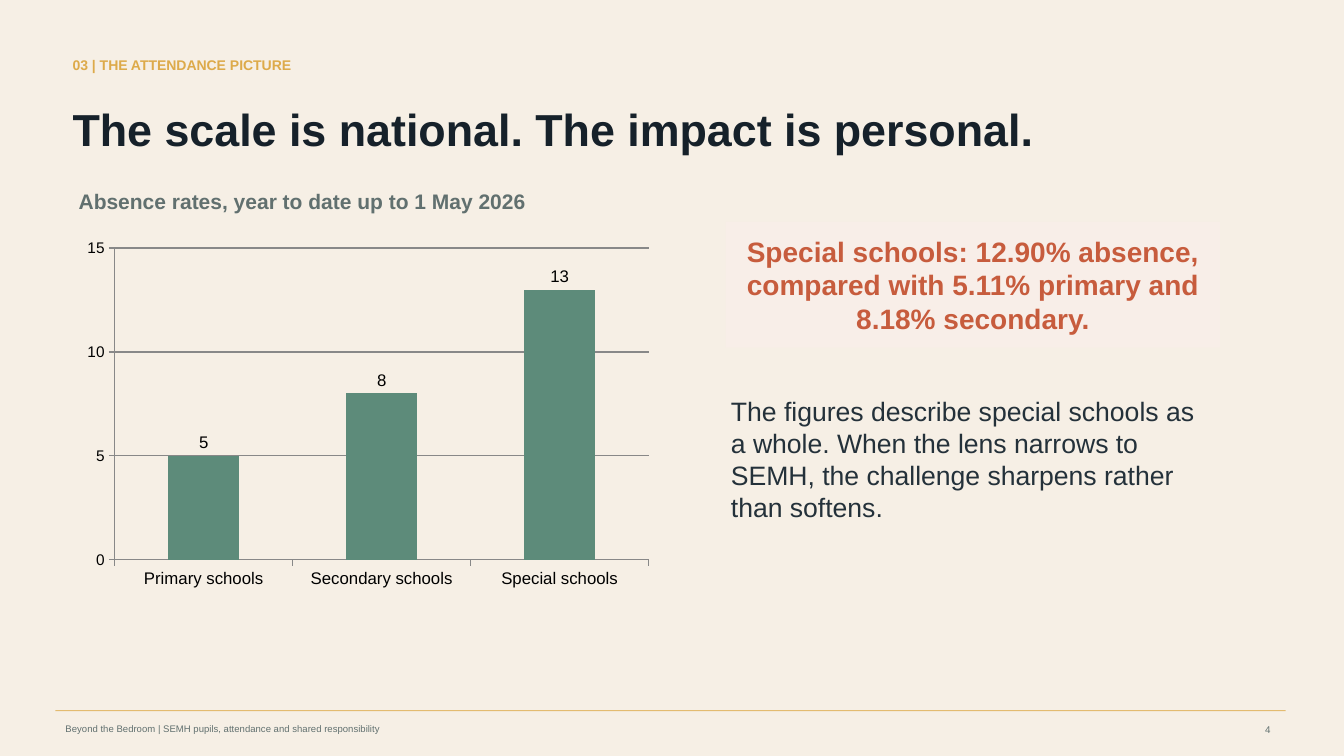
from lxml.etree import SubElement
from pptx import Presentation
from pptx.chart.data import CategoryChartData
from pptx.dml.color import RGBColor
from pptx.enum.chart import XL_CHART_TYPE as CHART, XL_LABEL_POSITION as LABEL
from pptx.enum.chart import XL_TICK_LABEL_POSITION as TICK_LABEL, XL_TICK_MARK as TICK
from pptx.enum.shapes import MSO_CONNECTOR as CONN, MSO_SHAPE as SHAPE
from pptx.enum.text import MSO_ANCHOR as ANCHOR, PP_ALIGN as ALIGN
from pptx.oxml.ns import qn
from pptx.util import Inches, Pt

CREAM, GOLD, INK, GREY = "F6EFE5", "DDAA4A", "16212A", "61706F"
BODY, RUST, BLUSH, GREEN = "24313A", "C75C3D", "F8EEE8", "5D8B7A"
BLACK, AXIS = "000000", "888888"


def rgb(value):
    return RGBColor.from_string(value)


def box(*lengths):
    return [Inches(n) for n in lengths]


def set_font(font, size, color, bold=False):
    values = {"name": "Arial", "size": Pt(size), "bold": bold}
    for name, value in values.items():
        setattr(font, name, value)
    font.color.rgb = rgb(color)


def set_line(line, color, width):
    line.color.rgb = rgb(color)
    line.width = Pt(width)


def write(sp, text, size, color, bold=False, align=ALIGN.LEFT):
    tf = sp.text_frame
    values = {"word_wrap": True, "vertical_anchor": ANCHOR.MIDDLE,
              "margin_left": 0, "margin_right": 0, "margin_top": 0, "margin_bottom": 0}
    for name, value in values.items():
        setattr(tf, name, value)
    p = tf.paragraphs[0]
    p.alignment = align
    r = p.add_run()
    r.text = text
    set_font(r.font, size, color, bold)


def add_text(s, at, *style):
    sp = s.shapes.add_textbox(*box(*at))
    write(sp, *style)
    return sp


def add_callout(s, at, fill, *style):
    sp = s.shapes.add_shape(SHAPE.RECTANGLE, *box(*at))
    sp.shadow.inherit = False
    sp.fill.solid()
    sp.fill.fore_color.rgb = rgb(fill)
    sp.line.fill.background()
    write(sp, *style, True, ALIGN.CENTER)


def add_rule(s, ends, color, width, opacity):
    line = s.shapes.add_connector(CONN.STRAIGHT, *box(*ends))
    set_line(line.line, color, width)
    pr = line._element.spPr
    SubElement(next(pr.iter(qn("a:srgbClr"))), qn("a:alpha"), val=str(opacity * 1000))
    SubElement(pr, qn("a:effectLst"))


def style_axis(axis, size):
    axis.major_tick_mark = TICK.OUTSIDE
    axis.minor_tick_mark = TICK.NONE
    set_font(axis.tick_labels.font, size, BLACK)
    set_line(axis.format.line, AXIS, 1)


def add_columns(s, at, rates):
    data = CategoryChartData()
    data.categories = list(rates)
    data.add_series("Series 1", list(rates.values()))
    chart = s.shapes.add_chart(CHART.COLUMN_CLUSTERED, *box(*at), data).chart
    chart.has_legend = chart.has_title = False
    set_font(chart.font, 10, BLACK)

    style_axis(chart.category_axis, 12)
    chart.category_axis.tick_label_position = TICK_LABEL.LOW
    axis = chart.value_axis
    style_axis(axis, 11)
    scale = {"minimum_scale": 0, "maximum_scale": 15, "major_unit": 5,
             "has_major_gridlines": True}
    for name, value in scale.items():
        setattr(axis, name, value)
    set_line(axis.major_gridlines.format.line, AXIS, 1)

    plot = chart.plots[0]
    plot.gap_width = 150
    plot.vary_by_categories = False
    fill = plot.series[0].format.fill
    fill.solid()
    fill.fore_color.rgb = rgb(GREEN)
    labels = plot.series[0].data_labels
    values = {"show_value": True, "number_format": "#,##0",
              "number_format_is_linked": False, "position": LABEL.OUTSIDE_END}
    for name, value in values.items():
        setattr(labels, name, value)
    set_font(labels.font, 12, BLACK)


def main():
    prs = Presentation()
    prs.slide_width, prs.slide_height = box(13.33, 7.5)
    s = prs.slides.add_slide(prs.slide_layouts[6])
    s.background.fill.solid()
    s.background.fill.fore_color.rgb = rgb(CREAM)

    add_rule(s, (0.55, 7.05, 12.75, 7.05), GOLD, 0.8, 75)
    add_text(s, (0.65, 7.13, 8, 0.2),
             "Beyond the Bedroom | SEMH pupils, attendance and shared responsibility", 6.8, GREY)
    add_text(s, (0.72, 0.52, 5.5, 0.25), "03 | THE ATTENDANCE PICTURE", 10, GOLD, True)
    add_text(s, (0.72, 0.85, 9.7, 0.85),
             "The scale is national. The impact is personal.", 32, INK, True)
    add_text(s, (0.78, 1.82, 6, 0.35),
             "Absence rates, year to date up to 1 May 2026", 15, GREY, True)
    add_columns(s, (0.75, 2.3, 5.8, 3.6),
                {"Primary schools": 5, "Secondary schools": 8, "Special schools": 13})
    add_callout(s, (7.2, 2.2, 4.9, 1.25), BLUSH,
                "Special schools: 12.90% absence, compared with 5.11% primary "
                "and 8.18% secondary.", 20, RUST)
    add_text(s, (7.25, 3.88, 4.8, 1.35),
             "The figures describe special schools as a whole. When the lens narrows to SEMH, "
             "the challenge sharpens rather than softens.", 19, BODY)
    number = add_text(s, (12.45, 7.13, 0.87, 0.33), "4", 7, GREY)
    number.text_frame.vertical_anchor = ANCHOR.TOP
    number.text_frame.margin_left = Inches(0.1)
    number.text_frame.margin_top = Inches(0.05)
    prs.save("out.pptx")


if __name__ == "__main__":
    main()
